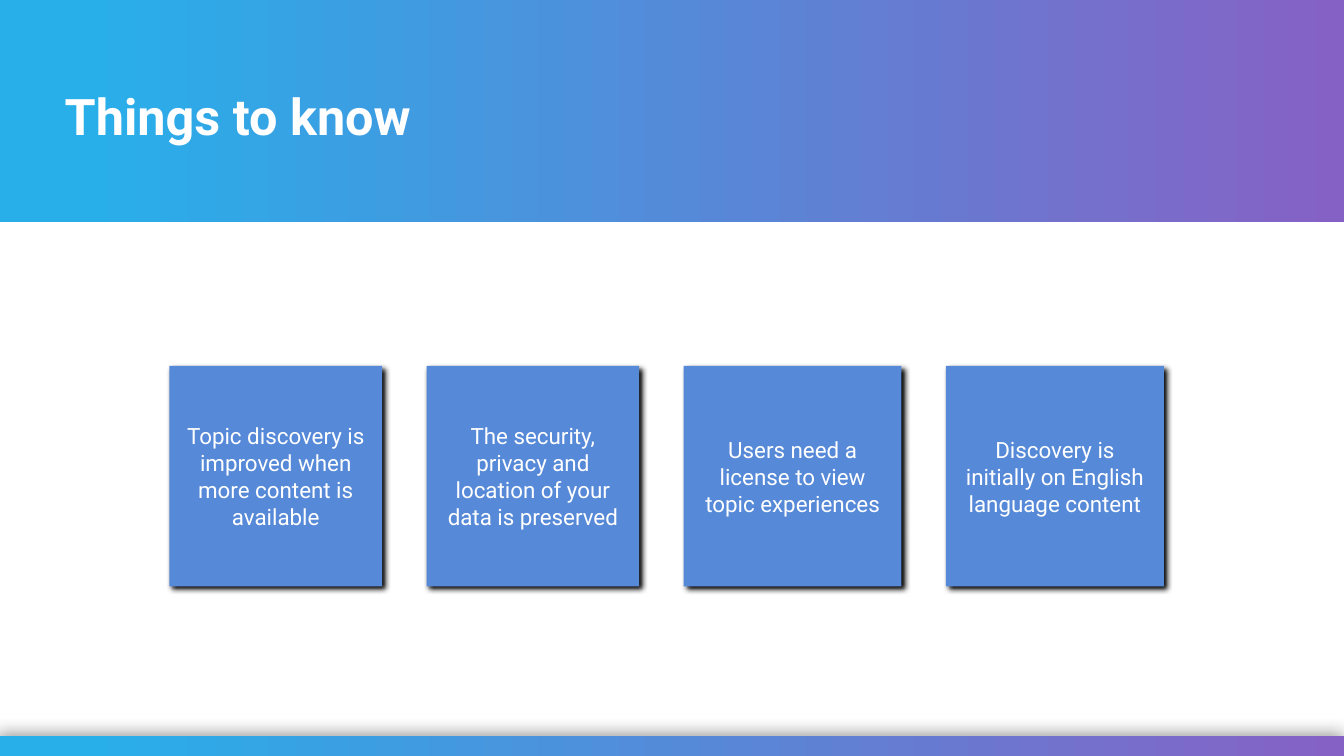
from dataclasses import dataclass

import pptx
import pptx.dml.color
import pptx.enum.shapes
import pptx.enum.text
import pptx.oxml
import pptx.oxml.ns
import pptx.util

Cm = pptx.util.Cm
Pt = pptx.util.Pt
Rgb = pptx.dml.color.RGBColor.from_string
Align = pptx.enum.text.PP_ALIGN
Anchor = pptx.enum.text.MSO_ANCHOR


@dataclass(frozen=True)
class Theme:
    font: str = "Roboto"
    head: int = 36
    body: int = 16
    white: str = "FFFFFF"
    card: str = "5689D7"
    start: str = "28AFEA"
    end: str = "8661C5"
    shade: str = "000000"


THEME = Theme()
WIDTH, HEIGHT = 33.87, 19.05
BAND, FOOT = 5.59, 0.5
LEFT, TOP, TALL, GAP = 4.27, 9.22, 5.56, 1.12
SIDE, NOTE = 0.17, 2.31

# Text, card width, and whether the text sits in its own box
CARDS = [
    ("Topic discovery is improved when more content is available", 5.36, False),
    ("The security, privacy and location of your data is preserved", 5.36, False),
    ("Users need a license to view topic experiences", 5.49, True),
    ("Discovery is initially on English language content", 5.49, True),
]


def write(shape, text, size=THEME.body, bold=False, align=Align.CENTER,
          anchor=Anchor.MIDDLE):
    frame = shape.text_frame
    frame.word_wrap = True
    frame.vertical_anchor = anchor
    para = frame.paragraphs[0]
    para.alignment = align
    run = para.add_run()
    run.text = text
    run.font.name = THEME.font
    run.font.size = Pt(size)
    run.font.bold = bold
    run.font.color.rgb = Rgb(THEME.white)


def add_rect(slide, left, top, width, height):
    kind = pptx.enum.shapes.MSO_SHAPE.RECTANGLE
    rect = slide.shapes.add_shape(
        kind, Cm(left), Cm(top), Cm(width), Cm(height))
    rect.shadow.inherit = False
    rect.line.fill.background()
    return rect


def add_box(slide, left, top, width, height):
    return slide.shapes.add_textbox(Cm(left), Cm(top), Cm(width), Cm(height))


def cast(shape, blur, angle, alpha):
    """Give the shape an outer shadow, 3 points away."""
    space = pptx.oxml.ns.nsdecls("a")
    shade = pptx.oxml.parse_xml(
        f'<a:outerShdw {space} blurRad="{Pt(blur)}" dist="{Pt(3)}" '
        f'dir="{angle * 60000}" algn="ctr" rotWithShape="0">'
        f'<a:srgbClr val="{THEME.shade}"><a:alpha val="{alpha * 1000}"/>'
        '</a:srgbClr></a:outerShdw>')
    shape.element.spPr.find(pptx.oxml.ns.qn("a:effectLst")).append(shade)


def add_band(slide, top, height):
    """Draw a full-width strip that fades from blue to purple."""
    band = add_rect(slide, 0, top, WIDTH, height)
    band.fill.gradient()
    band.fill.gradient_angle = 0
    marks = [(0.06, THEME.start), (1, THEME.end)]
    for stop, (place, color) in zip(band.fill.gradient_stops, marks):
        stop.position = place
        stop.color.rgb = Rgb(color)
    return band


def add_title(slide, text):
    box = add_box(slide, 1.63, 1.96, 30.61, 1.73)
    frame = box.text_frame
    frame.margin_left = frame.margin_right = frame.margin_bottom = 0
    frame.margin_top = Cm(0.18)
    write(box, text, size=THEME.head, bold=True, align=Align.LEFT,
          anchor=Anchor.TOP)


def add_card(slide, left, width, text, boxed):
    card = add_rect(slide, left, TOP, width, TALL)
    card.fill.solid()
    card.fill.fore_color.rgb = Rgb(THEME.card)
    cast(card, blur=4, angle=45, alpha=100)
    if boxed:
        card = add_box(slide, left + SIDE, TOP + (TALL - NOTE) / 2,
                       width - 2 * SIDE, NOTE)
    write(card, text)


def main():
    deck = pptx.Presentation()
    deck.slide_width, deck.slide_height = Cm(WIDTH), Cm(HEIGHT)
    slide = deck.slides.add_slide(deck.slide_layouts[6])

    add_band(slide, 0, BAND)
    foot = add_band(slide, HEIGHT - FOOT, FOOT)
    cast(foot, blur=12, angle=225, alpha=40)
    add_title(slide, "Things to know")

    left = LEFT
    for text, width, boxed in CARDS:
        add_card(slide, left, width, text, boxed)
        left += width + GAP

    deck.save("out.pptx")


if __name__ == "__main__":
    main()
